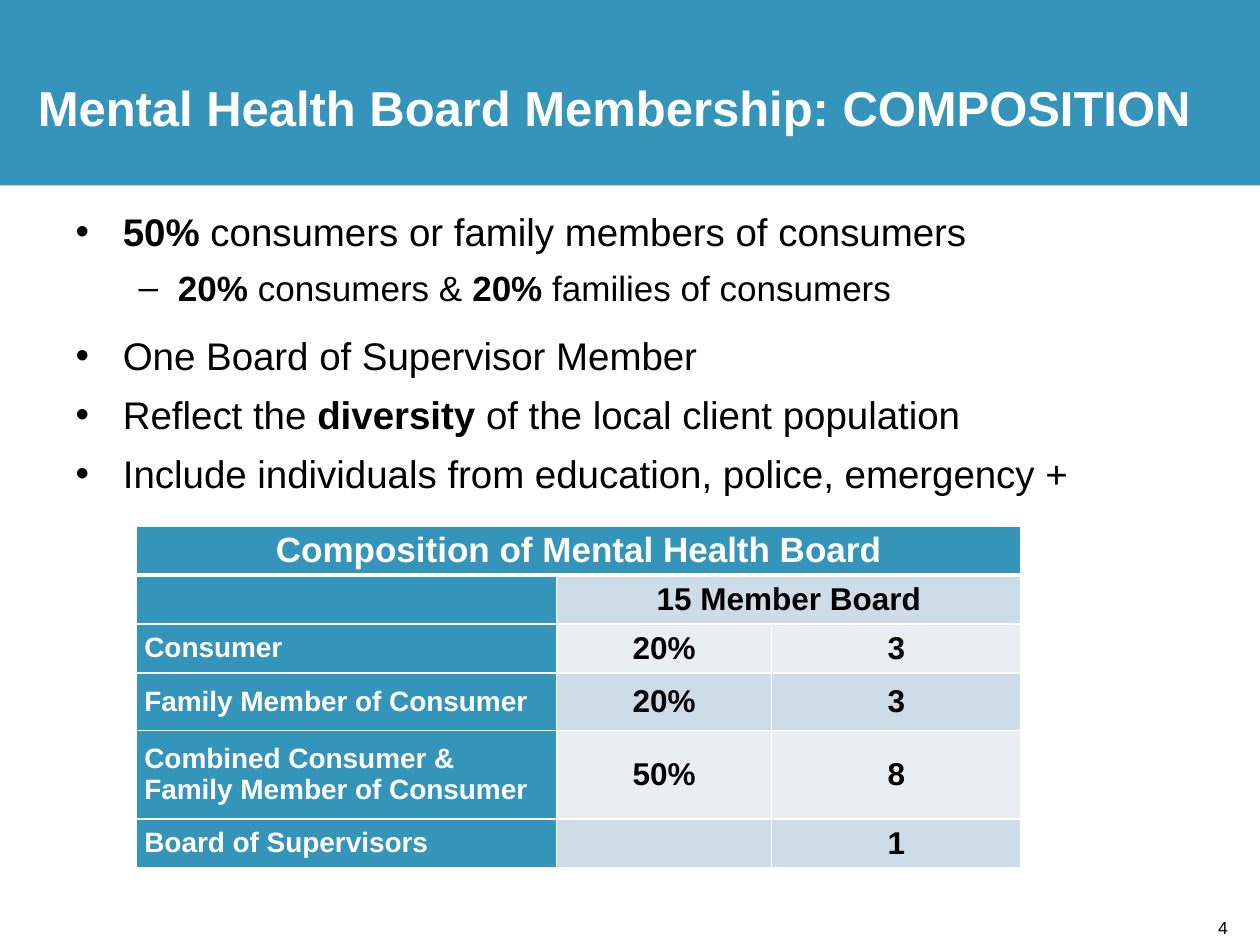
from dataclasses import dataclass

from lxml import etree
from pptx import Presentation
from pptx.dml.color import RGBColor
from pptx.enum import shapes as s
from pptx.enum import text as t
from pptx.oxml import ns
from pptx.util import Pt

HUES = {"blue": "3494BA", "white": "FFFFFF", "black": "000000",
        "band": "CEDCE7", "pale": "E8EEF3", "mint": "E8EFF3"}
FONT = "Arial"


@dataclass
class Item:
    bits: list[str]  # plain and bold by turns, plain first
    level: int = 0


@dataclass
class Row:
    high: float
    label: str
    share: str
    count: str
    fills: tuple[str, str]


ITEMS = [
    Item(["", "50%", " consumers or family members of consumers"]),
    Item(["", "20%", " consumers & ", "20%", " families of consumers"], 1),
    Item(["One Board of Supervisor Member"]),
    Item(["Reflect the ", "diversity ", "of the local client population"]),
    Item(["Include individuals from education, police, emergency +"]),
]
ROWS = [
    Row(28, "Consumer", "20%", "3", ("mint", "pale")),
    Row(33, "Family Member of Consumer", "20%", "3", ("band", "band")),
    Row(50.5, "Combined Consumer & Family Member of Consumer", "50%", "8",
        ("pale", "pale")),
    Row(28, "Board of Supervisors", "", "1", ("band", "band")),
]
COLS = [240, 123, 142.5]
HEAD = 28


def rgb(hue: str) -> RGBColor:
    return RGBColor.from_string(HUES[hue])


def write(para, words: str, size: float = 18, hue: str = "black",
          bold: bool = False, align=t.PP_ALIGN.LEFT) -> None:
    para.alignment = align
    run = para.add_run()
    run.text = words
    font = run.font
    font.name, font.size, font.bold = FONT, Pt(size), bold
    font.color.rgb = rgb(hue)


def place(shape, left: float, top: float, wide: float, high: float) -> None:
    shape.left, shape.top = Pt(left), Pt(top)
    shape.width, shape.height = Pt(wide), Pt(high)


def bullet(para, level: int) -> None:
    left, hang, mark = [(27, 27, "•"), (58.5, 22.5, "–")][level]
    para.level = level
    para.space_before = Pt(6)
    para.space_after = Pt(6 * level)
    para.line_spacing = 1.05
    prop = para._p.get_or_add_pPr()
    prop.set("marL", str(Pt(left)))
    prop.set("indent", str(-Pt(hang)))
    etree.SubElement(prop, ns.qn("a:buFont")).set("typeface", FONT)
    etree.SubElement(prop, ns.qn("a:buChar")).set("char", mark)


def border(cell, side: str, width: float) -> None:
    line = etree.SubElement(cell._tc.get_or_add_tcPr(), ns.qn(f"a:ln{side}"))
    line.set("w", str(Pt(width)))
    fill = etree.SubElement(line, ns.qn("a:solidFill"))
    etree.SubElement(fill, ns.qn("a:srgbClr")).set("val", HUES["white"])


def style(cell, fill: str, row: int) -> None:
    """Set borders first, as the schema wants them ahead of the fill."""
    for side in "LRTB":
        thick = (row, side) in [(0, "B"), (1, "T")]
        border(cell, side, 3 if thick else 1)
    cell.fill.solid()
    cell.fill.fore_color.rgb = rgb(fill)
    cell.margin_left = cell.margin_right = Pt(4.5)
    cell.margin_top = cell.margin_bottom = 0
    cell.vertical_anchor = t.MSO_ANCHOR.MIDDLE


def enter(cell, words: str, **form) -> None:
    if words:
        write(cell.text_frame.paragraphs[0], words, bold=True, **form)


def draw_list(body) -> None:
    place(body, 36, 114, 653, 196)
    frame = body.text_frame
    frame.auto_size = t.MSO_AUTO_SIZE.NONE
    for i, item in enumerate(ITEMS):
        para = frame.add_paragraph() if i else frame.paragraphs[0]
        bullet(para, item.level)
        for j, words in enumerate(item.bits):
            if words:
                write(para, words, size=22 - 2 * item.level, bold=j % 2 == 1)


def draw_table(slide) -> None:
    highs = [HEAD, HEAD] + [row.high for row in ROWS]
    grid = slide.shapes.add_table(len(highs), len(COLS), Pt(78), Pt(300.5),
                                  Pt(sum(COLS)), Pt(sum(highs))).table
    grid.first_row = grid.horz_banding = False
    for col, wide in zip(grid.columns, COLS):
        col.width = Pt(wide)
    for line, high in zip(grid.rows, highs):
        line.height = Pt(high)
    fills = [("blue",) * 2, ("band",) * 2] + [row.fills for row in ROWS]
    for r, pair in enumerate(fills):
        for c, fill in enumerate(("blue", *pair)):
            style(grid.cell(r, c), fill, r)
    grid.cell(0, 0).merge(grid.cell(0, 2))
    grid.cell(1, 1).merge(grid.cell(1, 2))
    mid = t.PP_ALIGN.CENTER
    enter(grid.cell(0, 0), "Composition of Mental Health Board",
          size=20, hue="white", align=mid)
    enter(grid.cell(1, 1), "15 Member Board", align=mid)
    for r, row in enumerate(ROWS, 2):
        enter(grid.cell(r, 0), row.label, size=16, hue="white")
        enter(grid.cell(r, 1), row.share, align=mid)
        enter(grid.cell(r, 2), row.count, align=mid)


def draw_title(title) -> None:
    place(title, 21.6, 19.5, 674, 83.5)
    frame = title.text_frame
    frame.auto_size = t.MSO_AUTO_SIZE.NONE
    frame.margin_left = 0
    frame.vertical_anchor = t.MSO_ANCHOR.MIDDLE
    para = frame.paragraphs[0]
    para.space_before = Pt(5.6)
    write(para, "Mental Health Board Membership: COMPOSITION",
          size=28, hue="white", bold=True)


def main() -> None:
    deck = Presentation()
    deck.slide_width, deck.slide_height = Pt(720), Pt(540)
    slide = deck.slides.add_slide(deck.slide_layouts[1])
    title, body = slide.placeholders

    band = slide.shapes.add_shape(s.MSO_SHAPE.RECTANGLE, 0, 0,
                                  Pt(720), Pt(106))
    band.shadow.inherit = False
    band.fill.solid()
    band.fill.fore_color.rgb = rgb("blue")
    band.line.fill.background()
    title._element.addprevious(band._element)

    draw_title(title)
    draw_list(body)
    draw_table(slide)
    page = slide.shapes.add_textbox(Pt(689), Pt(520.5), Pt(31), Pt(19.5))
    page.text_frame.word_wrap = True
    write(page.text_frame.paragraphs[0], "4", size=10)
    deck.save("out.pptx")


if __name__ == "__main__":
    main()
